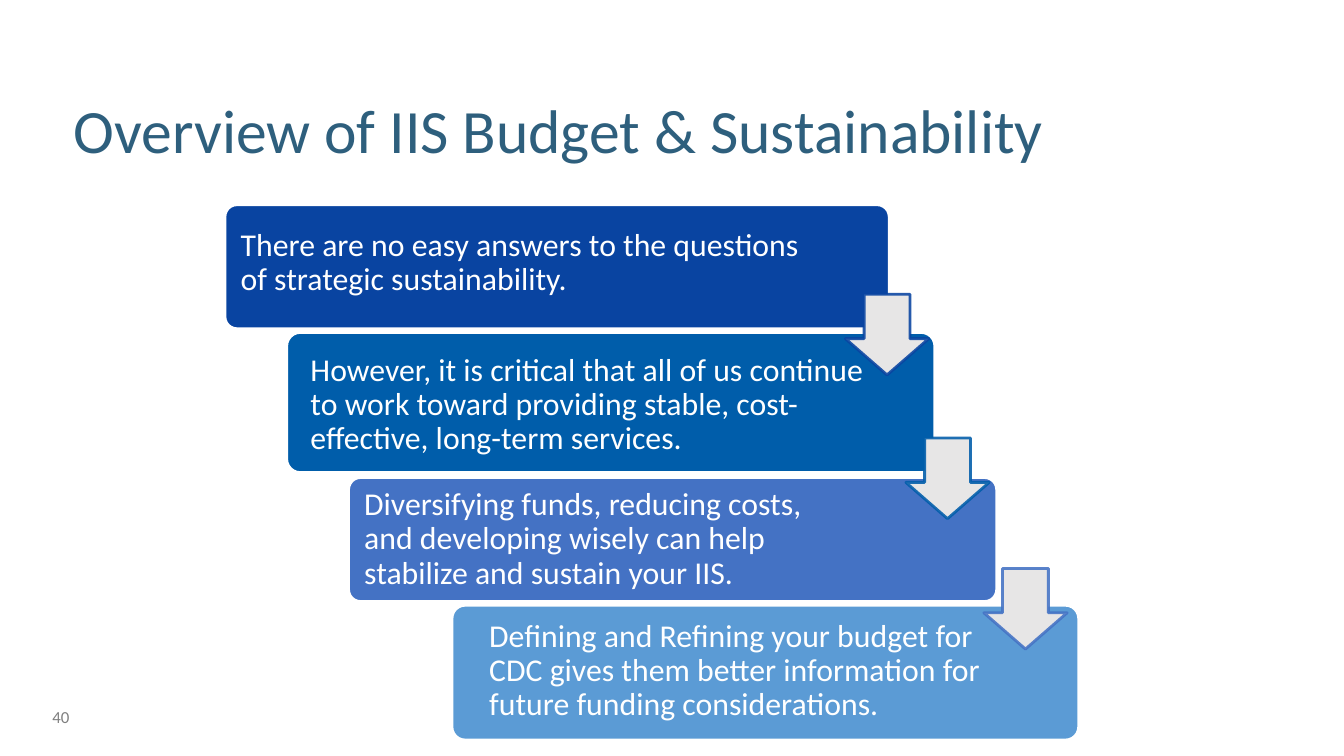
from lxml import etree
from pptx import Presentation
from pptx.dml.color import RGBColor
from pptx.enum.shapes import MSO_SHAPE
from pptx.enum.text import MSO_ANCHOR
from pptx.oxml.ns import qn
from pptx.util import Inches, Pt

ROUNDED = MSO_SHAPE.ROUNDED_RECTANGLE
DOWN_ARROW = MSO_SHAPE.DOWN_ARROW
MIDDLE = MSO_ANCHOR.MIDDLE
TOP = MSO_ANCHOR.TOP

STEPS = [
    ("0944A1", (1.67, 1.52, 4.95, 0.93), (1.72, 1.59, 4.35, 0.74),
     "There are no easy answers to the questions of strategic sustainability."),
    ("005DAA", (2.13, 2.47, 4.83, 1.05), (2.24, 2.58, 4.38, 0.87),
     "However, it is critical that all of us continue to work toward "
     "providing stable, cost-effective, long-term services."),
    ("4472C4", (2.59, 3.55, 4.83, 0.93), (2.64, 3.58, 3.73, 0.87),
     "Diversifying funds, reducing costs, and developing wisely can help "
     "stabilize and sustain your IIS."),
    ("5B9BD5", (3.36, 4.5, 4.67, 1.01), (3.57, 4.57, 4.07, 0.85),
     "Defining and Refining your budget for CDC gives them better "
     "information for future funding considerations."),
]
ARROW_CORNERS = [(6.29, 2.19), (6.74, 3.26), (7.32, 4.23)]
ARROW_SIZE = (0.62, 0.6)


def color(value):
    return RGBColor.from_string(value)


def add_text(slide, box, text, size, hex_color, insets, anchor=MIDDLE, spacing=1.0):
    frame = slide.shapes.add_textbox(*map(Inches, box)).text_frame
    horizontal, vertical = map(Inches, insets)
    layout = {
        "word_wrap": True, "vertical_anchor": anchor,
        "margin_left": horizontal, "margin_right": horizontal,
        "margin_top": vertical, "margin_bottom": vertical,
    }
    for name, value in layout.items():
        setattr(frame, name, value)
    paragraph = frame.paragraphs[0]
    paragraph.line_spacing = spacing
    run = paragraph.add_run()
    run.text = text
    for name, value in {"name": "Calibri", "size": Pt(size)}.items():
        setattr(run.font, name, value)
    run.font.color.rgb = color(hex_color)


def add_block(slide, kind, box, adjustments, fill, outline, width):
    block = slide.shapes.add_shape(kind, *map(Inches, box))
    block.shadow.inherit = False
    for index, value in enumerate(adjustments):
        block.adjustments[index] = value
    block.fill.solid()
    block.fill.fore_color.rgb = color(fill)
    block.line.color.rgb = color(outline)
    block.line.width = Pt(width)
    return block


def add_step(slide, fill, card_box, text_box, text):
    add_block(slide, ROUNDED, card_box, [0.1], fill, "FFFFFF", 2)
    add_text(slide, text_box, text, 17, "FFFFFF", (0.07, 0.07), spacing=0.9)


def add_arrow(slide, corner, outline):
    arrow = add_block(slide, DOWN_ARROW, corner + ARROW_SIZE, [0.55, 0.45],
                      "E7E6E6", outline, 1.5)
    tint = arrow.line._ln.find(".//" + qn("a:srgbClr"))
    etree.SubElement(tint, qn("a:alpha"), val="88000")


def main():
    deck = Presentation()
    deck.slide_width = Inches(10)
    deck.slide_height = Inches(10 * 9 / 16)
    slide = deck.slides.add_slide(deck.slide_layouts[6])
    add_text(slide, (0.39, 5.22, 0.44, 0.23), "40", 9, "7F7F7F", (0, 0.04), TOP)
    add_text(slide, (0.48, 0.52, 9.04, 0.88),
             "Overview of IIS Budget & Sustainability", 33, "2E5F7D", (0.07, 0.04))
    for step in STEPS:
        add_step(slide, *step)
    for corner, step in zip(ARROW_CORNERS, STEPS):
        add_arrow(slide, corner, step[0])
    deck.save("out.pptx")


if __name__ == "__main__":
    main()
